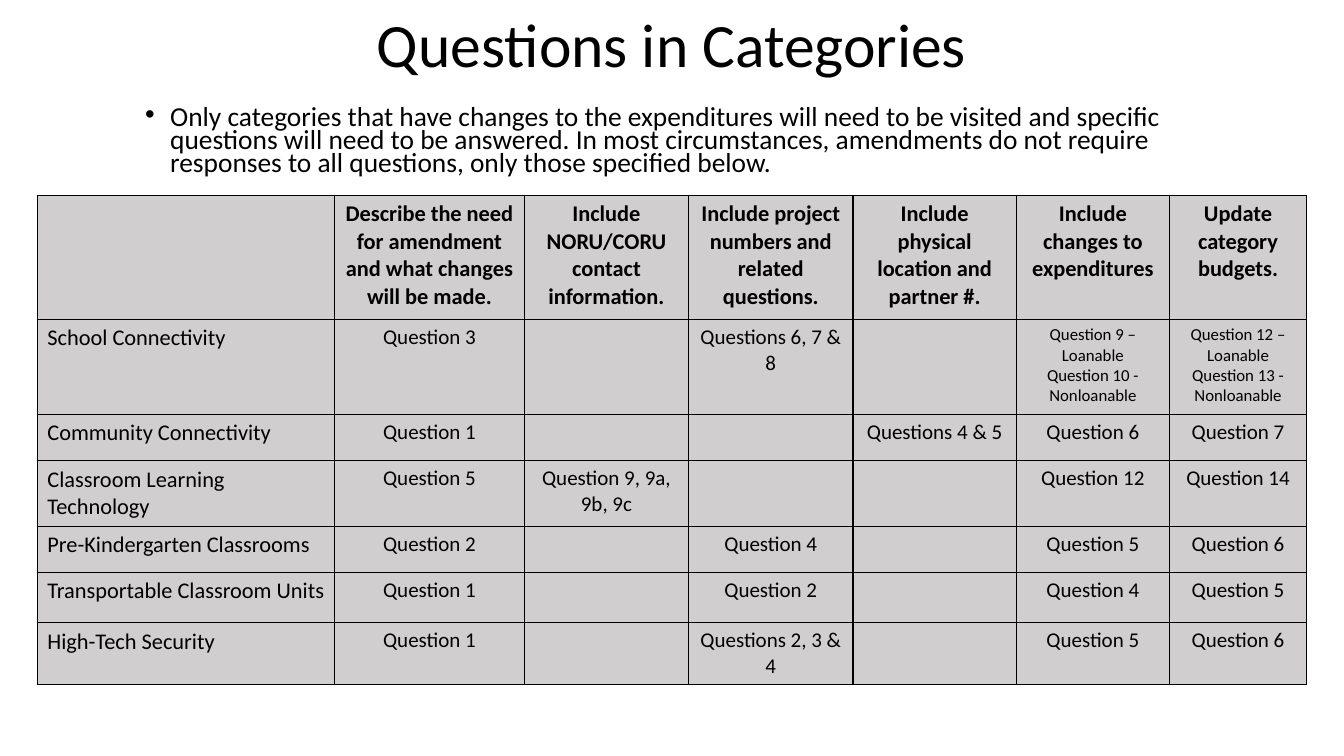
from lxml import etree
from pptx import Presentation
from pptx.dml.color import RGBColor
from pptx.enum.text import MSO_ANCHOR, MSO_AUTO_SIZE, PP_ALIGN
from pptx.oxml.ns import qn
from pptx.util import Inches, Pt

FONT = "Calibri"
INK = "000000"
CELL_FILL = "D0CECE"

COLUMN_WIDTHS = [2.95, 1.88, 1.63, 1.63, 1.62, 1.52, 1.36]
ROW_HEIGHTS = [1.23, 0.94, 0.46, 0.65, 0.46, 0.5, 0.6]
QUESTIONS = [
    ["", "Describe the need for amendment and what changes will be made.",
     "Include NORU/CORU contact information.",
     "Include project numbers and related questions.",
     "Include physical location and partner #.",
     "Include changes to expenditures", "Update category budgets."],
    ["School Connectivity", "Question 3", "", "Questions 6, 7 & 8", "",
     "Question 9 – Loanable\nQuestion 10 - Nonloanable",
     "Question 12 – Loanable\nQuestion 13 - Nonloanable"],
    ["Community Connectivity", "Question 1", "", "", "Questions 4 & 5",
     "Question 6", "Question 7"],
    ["Classroom Learning Technology", "Question 5", "Question 9, 9a, 9b, 9c",
     "", "", "Question 12", "Question 14"],
    ["Pre-Kindergarten Classrooms", "Question 2", "", "Question 4", "",
     "Question 5", "Question 6"],
    ["Transportable Classroom Units", "Question 1", "", "Question 2", "",
     "Question 4", "Question 5"],
    ["High-Tech Security", "Question 1", "", "Questions 2, 3 & 4", "",
     "Question 5", "Question 6"],
]


def color(value):
    return RGBColor.from_string(value)


def add_text(paragraph, text, size, bold=False):
    run = paragraph.add_run()
    run.text = text
    run.font.name = FONT
    run.font.size = Pt(size)
    run.font.bold = bold
    run.font.color.rgb = color(INK)


def add_title(slide, left, top, width, height):
    title = slide.shapes.title
    title.left, title.top = Inches(left), Inches(top)
    title.width, title.height = Inches(width), Inches(height)
    frame = title.text_frame
    frame.vertical_anchor = MSO_ANCHOR.MIDDLE
    heading = frame.paragraphs[0]
    heading.alignment = PP_ALIGN.CENTER
    heading.line_spacing = 0.9
    add_text(heading, "Questions in Categories", 44)


def add_instruction(slide, left, top, width, height):
    box = slide.shapes.add_textbox(
        Inches(left), Inches(top), Inches(width), Inches(height))
    frame = box.text_frame
    frame.word_wrap = True
    frame.auto_size = MSO_AUTO_SIZE.NONE
    instruction = frame.paragraphs[0]
    instruction.line_spacing = 0.7
    instruction.space_before = Pt(10)
    add_text(instruction,
             "Only categories that have changes to the expenditures will need "
             "to be visited and specific questions will need to be answered. "
             "In most circumstances, amendments do not require responses to "
             "all questions, only those specified below.", 19.6)
    props = instruction._p.get_or_add_pPr()
    props.set("marL", str(Inches(0.25)))
    props.set("indent", str(Inches(-0.25)))
    etree.SubElement(props, qn("a:buFont"), typeface="Arial")
    etree.SubElement(props, qn("a:buChar"), char="•")


def set_borders(cell):
    """Draw all four sides; the lines must precede the cell's fill in the XML."""
    props = cell._tc.get_or_add_tcPr()
    for position, side in enumerate(("a:lnL", "a:lnR", "a:lnT", "a:lnB")):
        line = etree.Element(qn(side), w=str(Pt(1)))
        fill = etree.SubElement(line, qn("a:solidFill"))
        etree.SubElement(fill, qn("a:srgbClr"), val=INK)
        props.insert(position, line)


def fill_cell(cell, text, is_header, is_category):
    cell.fill.solid()
    cell.fill.fore_color.rgb = color(CELL_FILL)
    set_borders(cell)
    if not text:
        return
    lines = text.split("\n")
    if is_header or is_category:
        size = 16
    else:
        size = 12 if len(lines) > 1 else 15
    frame = cell.text_frame
    for number, line in enumerate(lines):
        paragraph = frame.add_paragraph() if number else frame.paragraphs[0]
        paragraph.alignment = PP_ALIGN.LEFT if is_category else PP_ALIGN.CENTER
        add_text(paragraph, line, size, bold=is_header)


def add_question_table(slide, left, top):
    table = slide.shapes.add_table(
        len(ROW_HEIGHTS), len(COLUMN_WIDTHS), Inches(left), Inches(top),
        Inches(sum(COLUMN_WIDTHS)), Inches(sum(ROW_HEIGHTS))).table
    table.horz_banding = False
    for column, width in zip(table.columns, COLUMN_WIDTHS):
        column.width = Inches(width)
    for row, height in zip(table.rows, ROW_HEIGHTS):
        row.height = Inches(height)
    for r, answers in enumerate(QUESTIONS):
        for c, text in enumerate(answers):
            fill_cell(table.cell(r, c), text, r == 0, c == 0)


def main():
    deck = Presentation()
    deck.slide_width, deck.slide_height = Inches(13.33), Inches(7.5)
    slide = deck.slides.add_slide(deck.slide_layouts[5])
    add_title(slide, 0, 0, 13.33, 0.95)
    add_instruction(slide, 1.34, 1.02, 10.4, 1.11)
    add_question_table(slide, 0.37, 1.94)
    deck.save("out.pptx")


if __name__ == "__main__":
    main()
